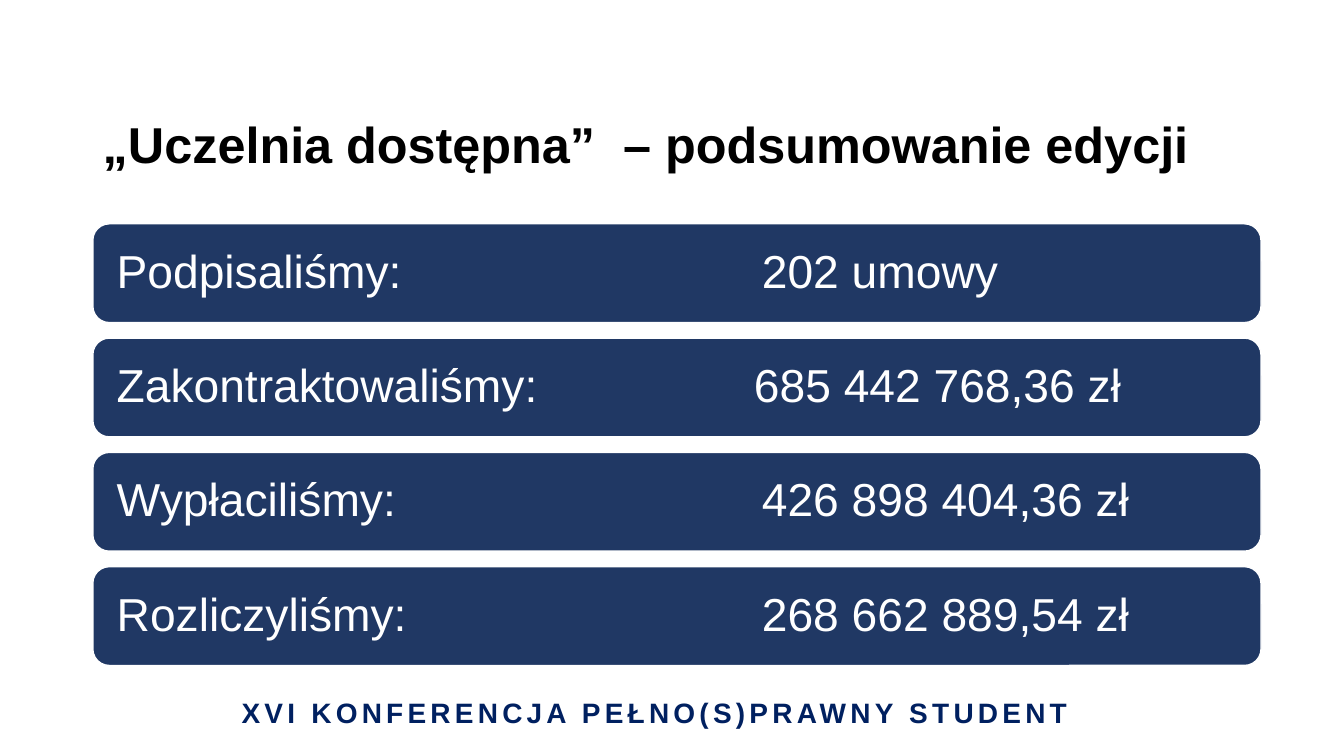
from dataclasses import dataclass

import pptx
import pptx.dml.color
import pptx.enum.shapes
import pptx.enum.text
import pptx.oxml
import pptx.oxml.ns
import pptx.shapes.autoshape
import pptx.slide
import pptx.text.text
import pptx.util
from pptx.util import Cm

FONT = "Arial"
NAVY = "203864"
WHITE = "FFFFFF"
BAR_LEFT, BAR_TOP, BAR_WIDTH, BAR_HEIGHT = 2.34, 5.64, 29.44, 2.49
BAR_PITCH = 2.88
BAR_INSET = 0.48


@dataclass(frozen=True)
class SummaryRow:
    label: str
    value: str
    value_offset: float = 16.26


@dataclass(frozen=True)
class Caption:
    text: str
    left: float
    top: float
    width: float
    height: float
    size: float
    color: str
    alignment: pptx.enum.text.PP_ALIGN
    line_spacing: float = 1.0
    letter_spacing: float = 0


SUMMARY_ROWS = [
    SummaryRow("Podpisaliśmy:", "202 umowy"),
    SummaryRow("Zakontraktowaliśmy:", "685 442 768,36 zł", 16.06),
    SummaryRow("Wypłaciliśmy:", "426 898 404,36 zł"),
    SummaryRow("Rozliczyliśmy:", "268 662 889,54 zł"),
]

CAPTIONS = [
    Caption("XVI KONFERENCJA PEŁNO(S)PRAWNY STUDENT", 5.79, 17.4, 21.41, 1.12,
            20, "002060", pptx.enum.text.PP_ALIGN.CENTER, letter_spacing=3),
    Caption("„Uczelnia dostępna”  – podsumowanie edycji", 2.34, 1.88, 29.21, 3.68,
            36, "000000", pptx.enum.text.PP_ALIGN.LEFT, line_spacing=0.9),
]


def rgb(color: str) -> pptx.dml.color.RGBColor:
    return pptx.dml.color.RGBColor.from_string(color)


def set_font(font: pptx.text.text.Font, size: float, color: str, bold: bool) -> None:
    font.name = FONT
    font.size = pptx.util.Pt(size)
    font.bold = bold
    font.color.rgb = rgb(color)


def add_tab_stop(paragraph: pptx.text.text._Paragraph, position: float) -> None:
    properties = paragraph._p.get_or_add_pPr()
    tab_list = pptx.oxml.parse_xml(
        f'<a:tabLst {pptx.oxml.ns.nsdecls("a")}><a:tab pos="{Cm(position)}" algn="l"/></a:tabLst>'
    )
    properties.append(tab_list)


def draw_caption(slide: pptx.slide.Slide, caption: Caption) -> None:
    box = slide.shapes.add_textbox(
        Cm(caption.left), Cm(caption.top), Cm(caption.width), Cm(caption.height)
    )
    frame = box.text_frame
    frame.word_wrap = True
    frame.vertical_anchor = pptx.enum.text.MSO_ANCHOR.MIDDLE
    paragraph = frame.paragraphs[0]
    paragraph.alignment = caption.alignment
    paragraph.line_spacing = caption.line_spacing
    run = paragraph.add_run()
    run.text = caption.text
    set_font(paragraph.font, caption.size, caption.color, True)
    if caption.letter_spacing:
        run._r.get_or_add_rPr().set("spc", str(round(caption.letter_spacing * 100)))


def draw_summary_row(slide: pptx.slide.Slide, row: SummaryRow, index: int) -> None:
    bar = slide.shapes.add_shape(
        pptx.enum.shapes.MSO_SHAPE.ROUNDED_RECTANGLE,
        Cm(BAR_LEFT), Cm(BAR_TOP + index * BAR_PITCH), Cm(BAR_WIDTH), Cm(BAR_HEIGHT),
    )
    bar.shadow.inherit = False
    bar.fill.solid()
    bar.fill.fore_color.rgb = rgb(NAVY)
    bar.line.color.rgb = rgb(WHITE)
    bar.line.width = pptx.util.Pt(1)
    frame = bar.text_frame
    frame.word_wrap = True
    frame.vertical_anchor = pptx.enum.text.MSO_ANCHOR.MIDDLE
    frame.margin_left = frame.margin_right = Cm(BAR_INSET)
    paragraph = frame.paragraphs[0]
    paragraph.text = f"{row.label}\t{row.value}"
    add_tab_stop(paragraph, row.value_offset)
    paragraph.alignment = pptx.enum.text.PP_ALIGN.LEFT
    paragraph.line_spacing = 0.9
    set_font(paragraph.font, 33, WHITE, False)


def main() -> None:
    presentation = pptx.Presentation()
    presentation.slide_width = Cm(33.87)
    presentation.slide_height = Cm(19.05)
    slide = presentation.slides.add_slide(presentation.slide_layouts[6])
    for caption in CAPTIONS:
        draw_caption(slide, caption)
    for index, row in enumerate(SUMMARY_ROWS):
        draw_summary_row(slide, row, index)
    presentation.save("out.pptx")


if __name__ == "__main__":
    main()
